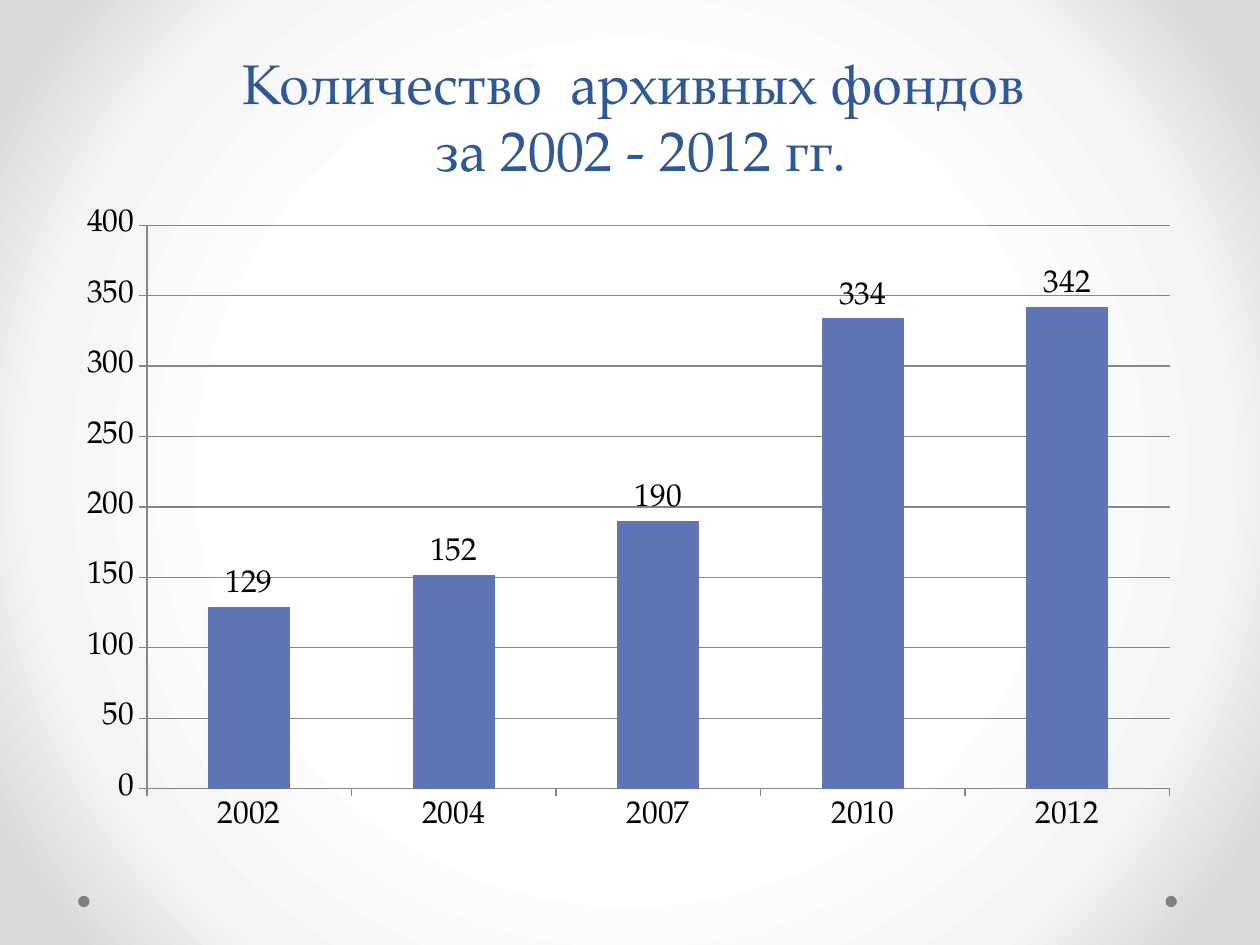
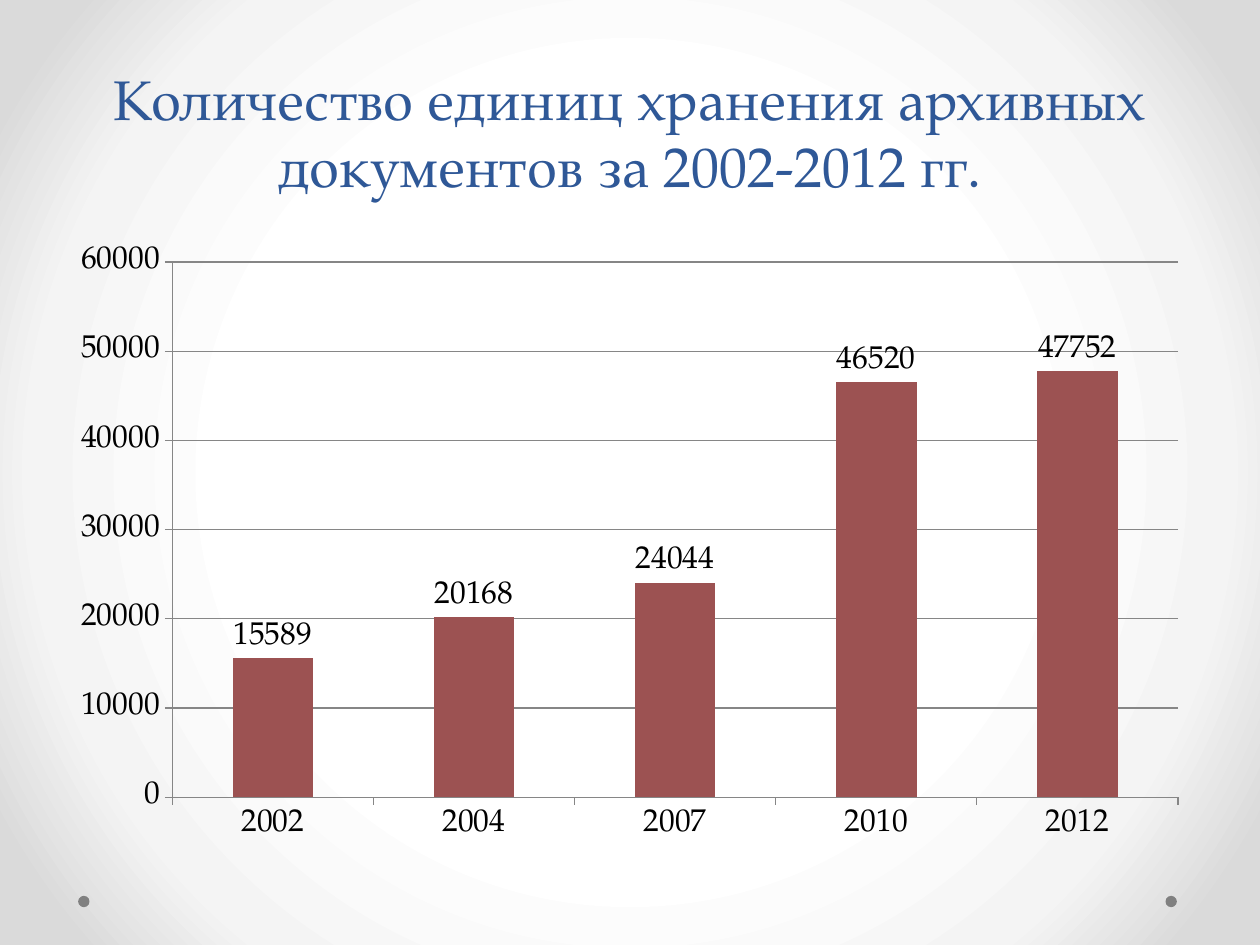
from lxml.etree import SubElement
from pptx import Presentation
from pptx.chart.data import CategoryChartData
from pptx.dml.color import RGBColor
from pptx.enum.chart import XL_CHART_TYPE, XL_LABEL_POSITION, XL_TICK_MARK
from pptx.enum.shapes import MSO_SHAPE
from pptx.enum.text import MSO_ANCHOR, MSO_AUTO_SIZE, PP_ALIGN
from pptx.oxml.ns import qn
from pptx.util import Pt

PX = 9144
FACE = "TeX Gyre Pagella"
NAVY = RGBColor(0x2F, 0x58, 0x97)
BLUE = RGBColor(0x60, 0x76, 0xB4)
RED = RGBColor(0x9C, 0x52, 0x52)
GREY = RGBColor(0x80, 0x80, 0x80)
RULE = RGBColor(0x86, 0x86, 0x86)
BLACK = RGBColor(0, 0, 0)
GLOW = [(50, "FFFFFF"), (76, "F4F4F4"), (92, "DADADA")]
YEARS = ["2002", "2004", "2007", "2010", "2012"]

TITLE = {"name": FACE, "size": Pt(32), "bold": False}
LABEL = {"name": FACE, "size": Pt(18), "bold": False}
FRAME = {"word_wrap": True, "auto_size": MSO_AUTO_SIZE.NONE,
         "vertical_anchor": MSO_ANCHOR.BOTTOM}
AXIS = {"major_tick_mark": XL_TICK_MARK.OUTSIDE,
        "minor_tick_mark": XL_TICK_MARK.NONE}
TAGS = {"show_value": True, "position": XL_LABEL_POSITION.OUTSIDE_END}


def apply(item, style):
    for name, value in style.items():
        setattr(item, name, value)


def scale(box):
    return [n * PX for n in box]


class Deck:
    def __init__(self):
        self.prs = Presentation()
        apply(self.prs, {"slide_width": 1000 * PX, "slide_height": 750 * PX})
        self.slide = None
        self.glow()

    def glow(self):
        master = self.prs.slide_master
        master.background.fill.gradient()
        grad = master.element.find(".//" + qn("a:gradFill"))
        for part in list(grad):
            grad.remove(part)
        stops = SubElement(grad, qn("a:gsLst"))
        for pos, tone in GLOW:
            stop = SubElement(stops, qn("a:gs"), pos=str(pos * 1000))
            SubElement(stop, qn("a:srgbClr"), val=tone)
        path = SubElement(grad, qn("a:path"), path="circle")
        SubElement(path, qn("a:fillToRect"),
                   **dict.fromkeys("ltrb", "50000"))

    def page(self):
        self.slide = self.prs.slides.add_slide(self.prs.slide_layouts[5])
        for left in (925, 62):
            self.dot(left, 711, 9)

    def dot(self, left, top, size):
        dot = self.slide.shapes.add_shape(
            MSO_SHAPE.OVAL, *scale((left, top, size, size)))
        dot.shadow.inherit = False
        dot.fill.solid()
        dot.fill.fore_color.rgb = GREY
        dot.line.fill.background()

    def title(self, text, box):
        title = self.slide.shapes.title
        apply(title, dict(zip(("left", "top", "width", "height"), scale(box))))
        frame = title.text_frame
        frame.text = text
        apply(frame, FRAME)
        for para in frame.paragraphs:
            para.alignment = PP_ALIGN.CENTER
            for run in para.runs:
                apply(run.font, TITLE)
                run.font.color.rgb = NAVY

    def chart(self, values, tone, box, top, step, inner):
        data = CategoryChartData()
        data.categories = YEARS
        data.add_series("Series 1", values)
        chart = self.slide.shapes.add_chart(
            XL_CHART_TYPE.COLUMN_CLUSTERED, *scale(box), data).chart
        apply(chart, {"has_legend": False, "has_title": False})
        apply(chart.font, LABEL)
        chart.font.color.rgb = BLACK
        plot = chart.plots[0]
        apply(plot, {"gap_width": 150, "vary_by_categories": False,
                     "has_data_labels": True})
        apply(plot.data_labels, TAGS)
        fill = plot.series[0].format.fill
        fill.solid()
        fill.fore_color.rgb = tone
        across, up = chart.category_axis, chart.value_axis
        apply(up, {"minimum_scale": 0, "maximum_scale": top,
                   "major_unit": step, "has_major_gridlines": True})
        for axis in (across, up):
            apply(axis, AXIS)
        for part in (across, up, up.major_gridlines):
            part.format.line.width = Pt(0.75)
            part.format.line.color.rgb = RULE
        self.layout(chart, inner)

    def layout(self, chart, inner):
        area = chart.element.find(".//" + qn("c:plotArea"))
        for old in area.findall(qn("c:layout")):
            area.remove(old)
        layout = SubElement(area, qn("c:layout"))
        area.insert(0, layout)
        manual = SubElement(layout, qn("c:manualLayout"))
        rules = {"layoutTarget": "inner", "xMode": "edge", "yMode": "edge"}
        rules.update(zip("xywh", inner))
        for name, value in rules.items():
            SubElement(manual, qn("c:" + name), val=str(value))


def main():
    deck = Deck()

    deck.page()
    deck.title("Количество  архивных фондов \vза 2002 - 2012 гг.",
               (67, 56, 883, 94))
    deck.chart([129, 152, 190, 334, 342], BLUE, (51, 155, 899, 531),
               400, 50, (0.073, 0.045, 0.903, 0.842))

    deck.page()
    deck.title("Количество единиц хранения архивных документов "
               "за 2002-2012 гг.", (0, 29, 1000, 134))
    deck.chart([15589, 20168, 24044, 46520, 47752], RED, (47, 186, 907, 491),
               60000, 10000, (0.099, 0.045, 0.88, 0.865))

    deck.prs.save("out.pptx")


if __name__ == "__main__":
    main()
